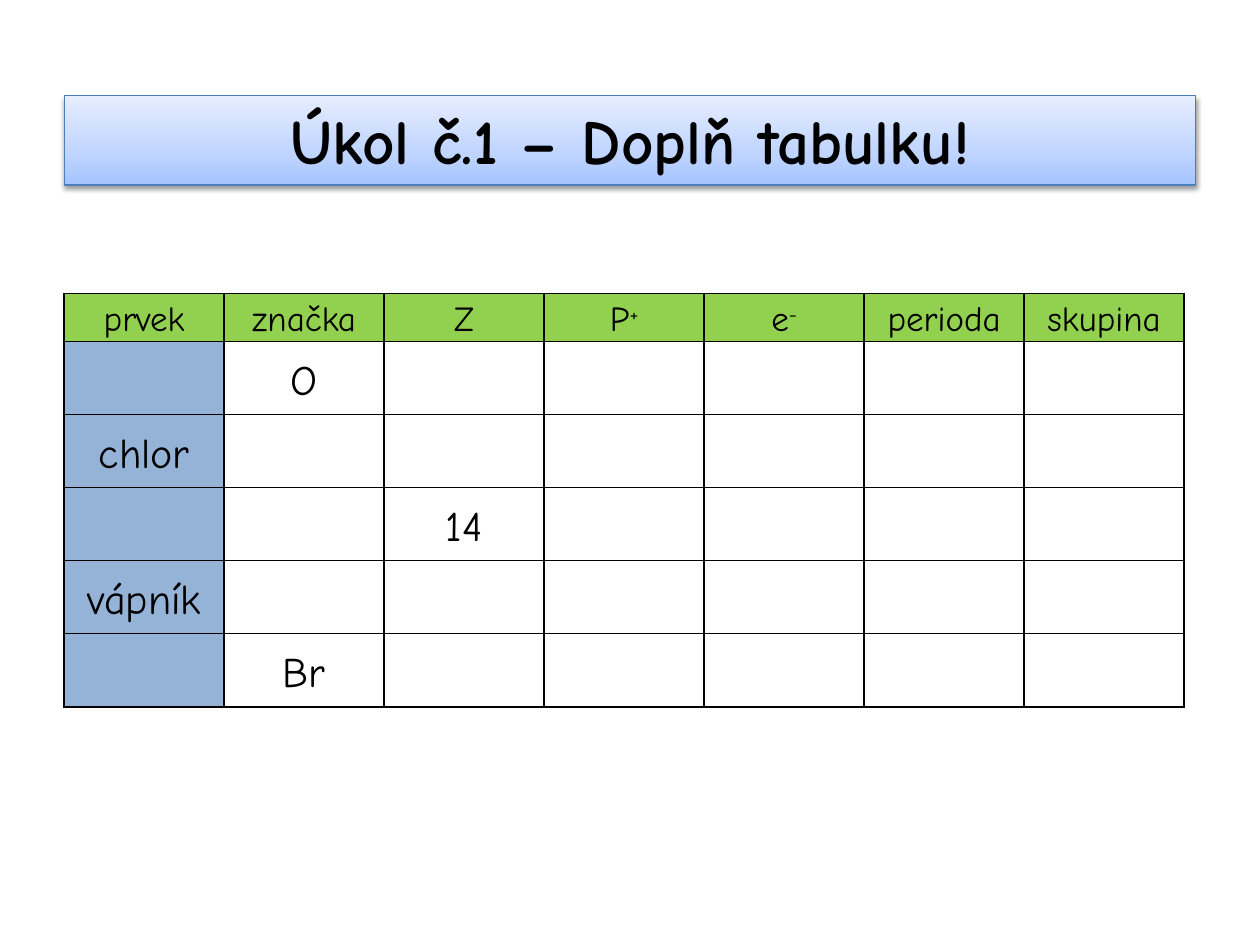
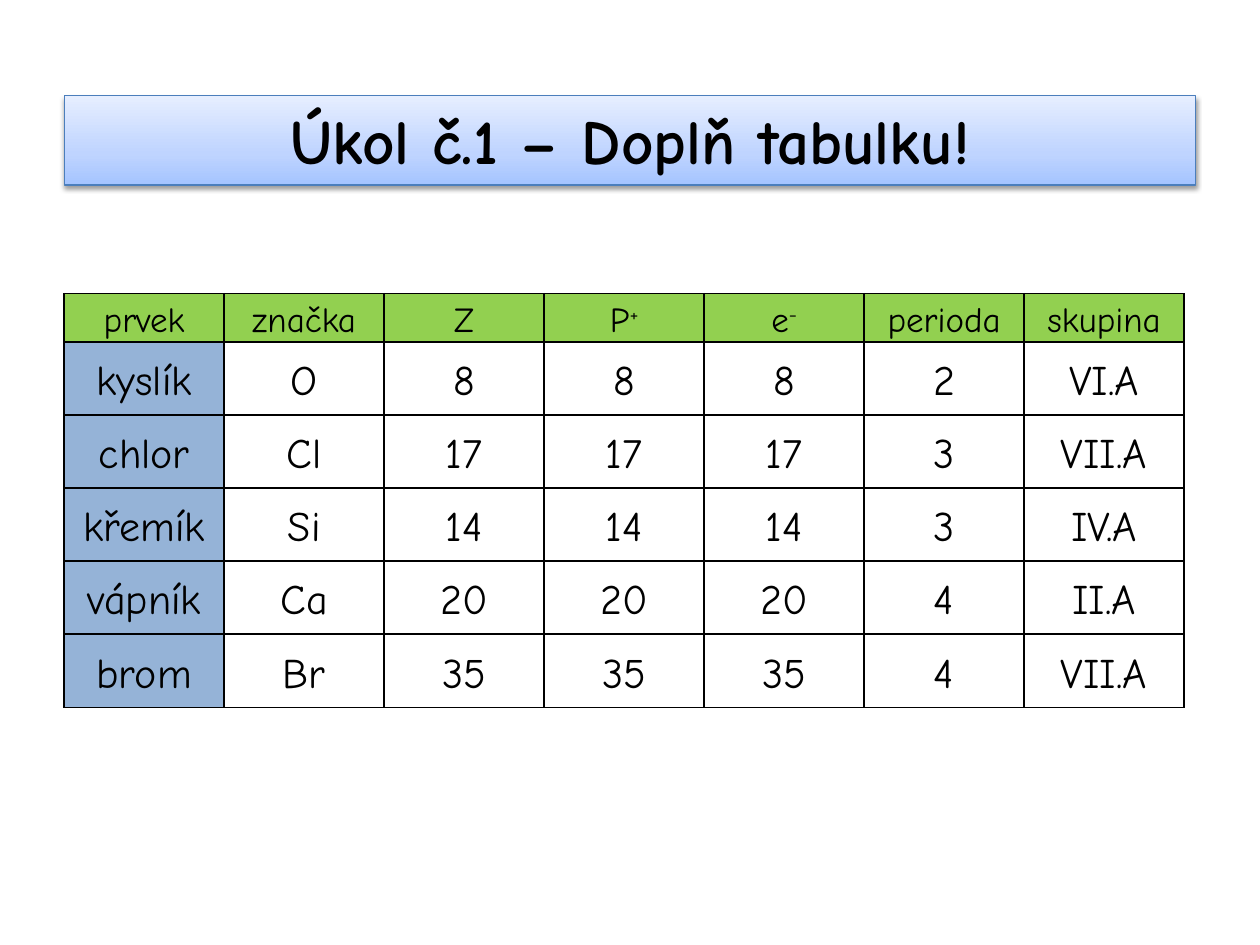
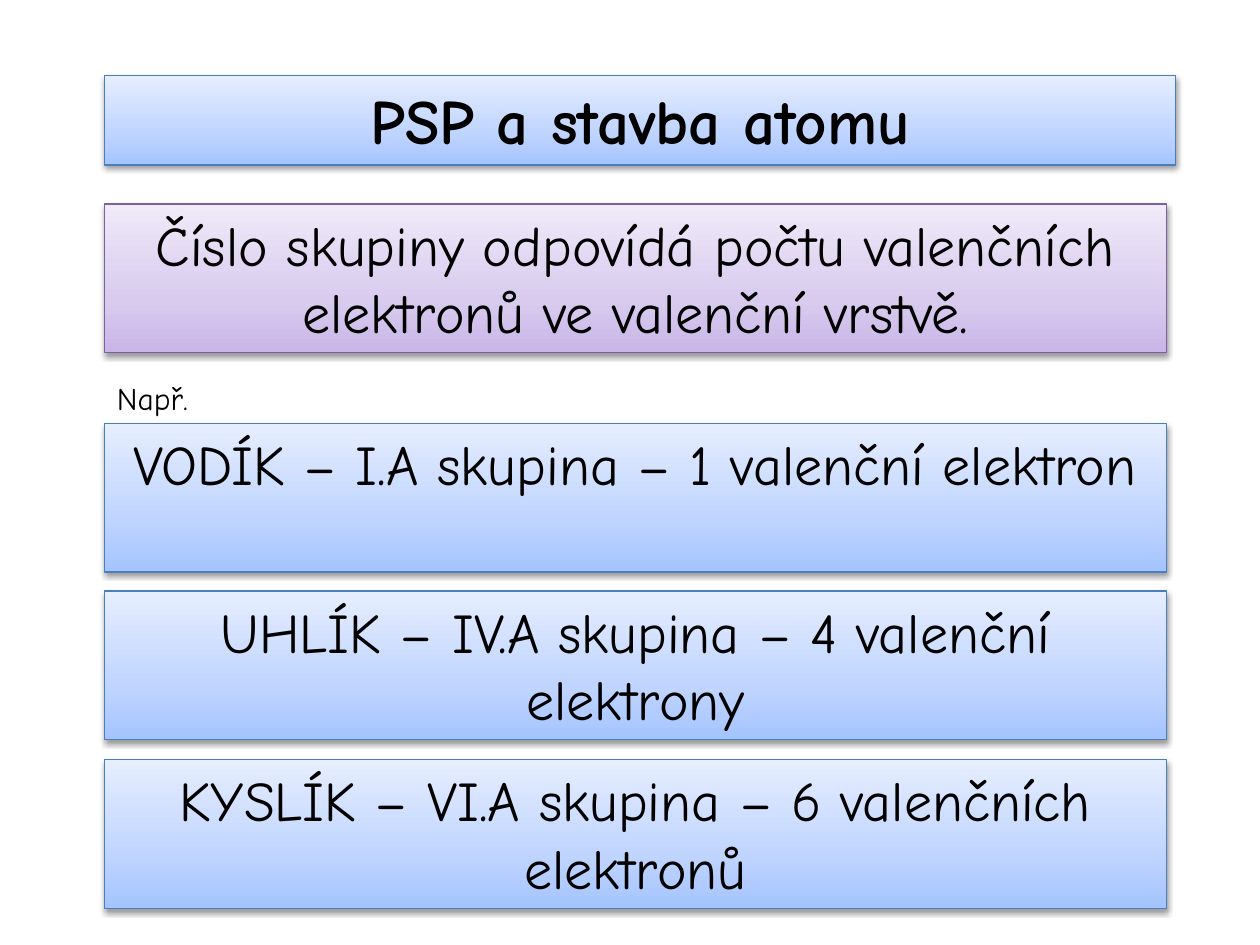
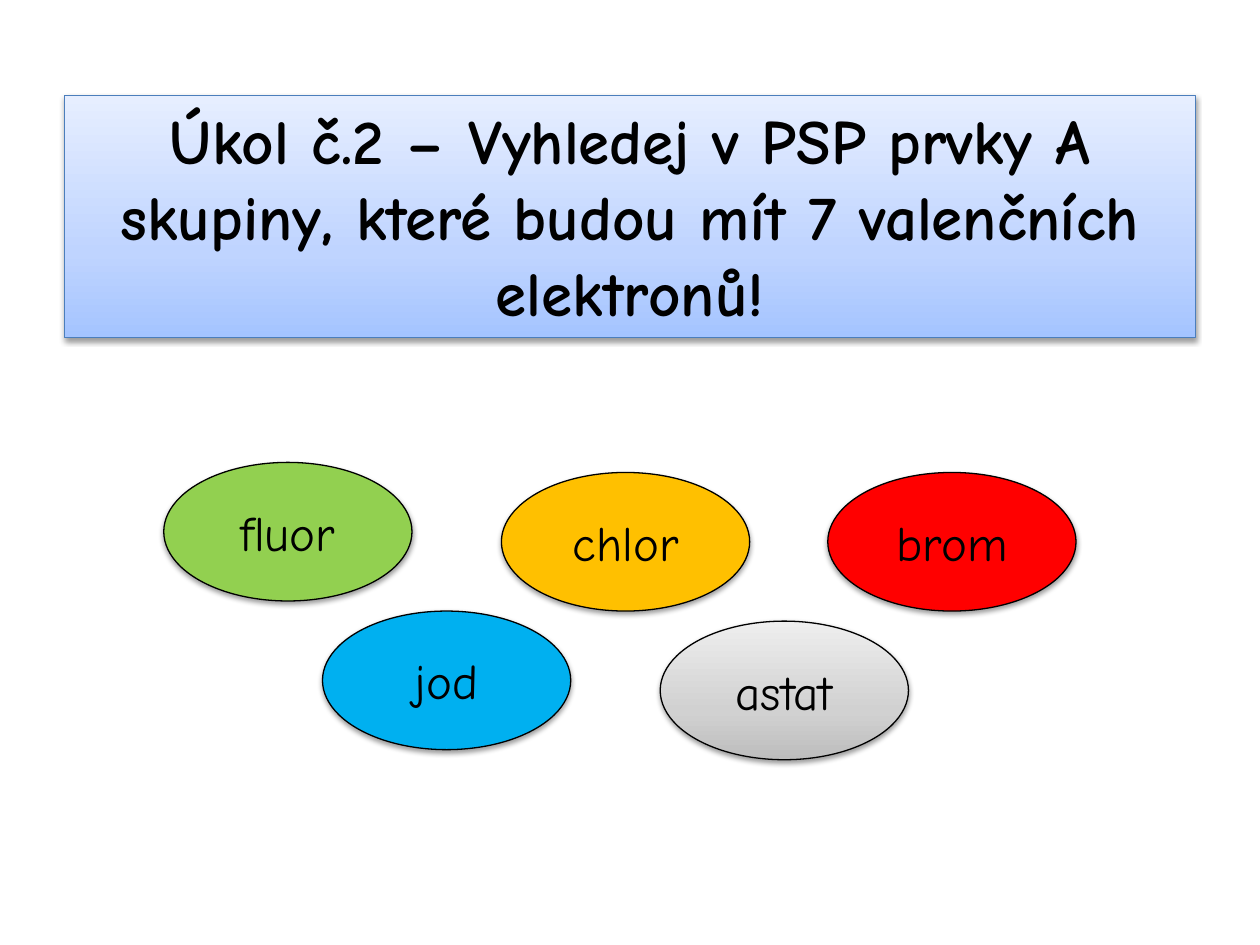
import dataclasses

import lxml.etree
import pptx
import pptx.dml.color
import pptx.enum.shapes
import pptx.enum.text
import pptx.oxml
import pptx.oxml.ns
import pptx.util

Inches = pptx.util.Inches
Pt = pptx.util.Pt
qn = pptx.oxml.ns.qn
ShapeKind = pptx.enum.shapes.MSO_SHAPE
Align = pptx.enum.text.PP_ALIGN
Anchor = pptx.enum.text.MSO_ANCHOR
AutoSize = pptx.enum.text.MSO_AUTO_SIZE


@dataclasses.dataclass(frozen=True)
class Theme:
    font: str = "Comic Neue"
    ink: str = "000000"
    green: str = "92D050"
    steel: str = "95B3D7"
    amber: str = "FFC000"
    red: str = "FF0000"
    sky: str = "00B0F0"
    # Gradients run from the bottom edge to the top edge.
    blue_fade: tuple = ("A4C4FF", "BFD4FF", "E6EEFF")
    violet_fade: tuple = ("C9B5E8", "D8CBEE", "F0EAF9")
    gray_fade: tuple = ("BDBDBD", "D1D1D1", "EEEEEE")
    fade_stops: tuple = (0, 35, 100)
    blue_line: str = "4B7EBC"
    violet_line: str = "7D60A0"
    outline: float = 0.75
    cell_border: float = 1
    title_size: int = 36
    statement_size: int = 32
    oval_size: int = 28
    cell_size: int = 24
    header_size: int = 20
    note_size: int = 18


THEME = Theme()

HEADERS = ("prvek", "značka", "Z", ("P", "+"), ("e", "-"), "perioda", "skupina")
ELEMENTS = (
    ("kyslík", "O", "8", "8", "8", "2", "VI.A"),
    ("chlor", "Cl", "17", "17", "17", "3", "VII.A"),
    ("křemík", "Si", "14", "14", "14", "3", "IV.A"),
    ("vápník", "Ca", "20", "20", "20", "4", "II.A"),
    ("brom", "Br", "35", "35", "35", "4", "VII.A"),
)
CLUE_COLUMNS = (1, 0, 2, 0, 1)

EXAMPLES = (
    (3.36, "VODÍK – I.A skupina – 1 valenční elektron"),
    (4.69, "UHLÍK – IV.A skupina – 4 valenční elektrony"),
    (6.03, "KYSLÍK – VI.A skupina – 6 valenčních elektronů"),
)

HALOGENS = (
    ("fluor", 1.3, 3.67, THEME.green),
    ("chlor", 3.98, 3.75, THEME.amber),
    ("brom", 6.57, 3.75, THEME.red),
    ("jod", 2.56, 4.85, THEME.sky),
    ("astat", 5.24, 4.93, THEME.gray_fade),
)


def rgb(color):
    return pptx.dml.color.RGBColor.from_string(color)


def add_xml(parent, tag, **attributes):
    return lxml.etree.SubElement(parent, qn(tag), attributes)


def style_runs(para, size, bold=False):
    for span in para.runs:
        span.font.name = THEME.font
        span.font.size = Pt(size)
        span.font.bold = bold
        span.font.color.rgb = rgb(THEME.ink)


def paint(shape, fill):
    """Fill with one colour, or with a vertical fade when given a tuple."""
    if isinstance(fill, str):
        shape.fill.solid()
        shape.fill.fore_color.rgb = rgb(fill)
        return
    shape.fill.gradient()
    shape.fill.gradient_angle = 90
    stops = shape._element.spPr.find(".//" + qn("a:gsLst"))
    for stop in list(stops):
        stops.remove(stop)
    for position, color in zip(THEME.fade_stops, fill):
        stop = add_xml(stops, "a:gs", pos=str(position * 1000))
        add_xml(stop, "a:srgbClr", val=color)


def add_soft_shadow(shape):
    shape.shadow.inherit = False
    effects = shape._element.spPr.find(qn("a:effectLst"))
    shadow = add_xml(effects, "a:outerShdw", blurRad=str(Pt(3.1)), dist=str(Pt(1.6)),
                     dir="5400000", rotWithShape="0")
    color = add_xml(shadow, "a:srgbClr", val=THEME.ink)
    add_xml(color, "a:alpha", val="38000")


def add_figure(shapes, kind, place, text, size, fill, line, bold=False):
    figure = shapes.add_shape(kind, *map(Inches, place))
    paint(figure, fill)
    figure.line.color.rgb = rgb(line)
    figure.line.width = Pt(THEME.outline)
    add_soft_shadow(figure)
    frame = figure.text_frame
    frame.word_wrap = True
    frame.text = text
    frame.paragraphs[0].alignment = Align.CENTER
    style_runs(frame.paragraphs[0], size, bold)
    return figure


def add_panel(page, place, text, size=THEME.statement_size,
              fill=THEME.blue_fade, line=THEME.blue_line, bold=False):
    panel = add_figure(page.shapes, ShapeKind.RECTANGLE, place, text, size, fill, line, bold)
    panel.text_frame.vertical_anchor = Anchor.TOP
    panel.text_frame.auto_size = AutoSize.SHAPE_TO_FIT_TEXT


def add_title(page, text, left=0.51, top=0.76, width=8.98, height=0.71):
    add_panel(page, (left, top, width, height), text, THEME.title_size, bold=True)


def add_oval(group, text, left, top, fill):
    oval = add_figure(group.shapes, ShapeKind.OVAL, (left, top, 1.97, 1.1),
                      text, THEME.oval_size, fill, THEME.ink)
    oval.text_frame.vertical_anchor = Anchor.MIDDLE


def add_note(page, place, text):
    box = page.shapes.add_textbox(*map(Inches, place))
    box.text_frame.word_wrap = False
    box.text_frame.auto_size = AutoSize.SHAPE_TO_FIT_TEXT
    box.text_frame.text = text
    style_runs(box.text_frame.paragraphs[0], THEME.note_size)


def add_borders(cell):
    properties = cell._tc.get_or_add_tcPr()
    for side in ("a:lnL", "a:lnR", "a:lnT", "a:lnB"):
        border = add_xml(properties, side, w=str(Pt(THEME.cell_border)))
        add_xml(add_xml(border, "a:solidFill"), "a:srgbClr", val=THEME.ink)


def write_cell(cell, content, size):
    """Write a string, or a (base, superscript) pair."""
    base, superscript = (content, "") if isinstance(content, str) else content
    cell.vertical_anchor = Anchor.MIDDLE
    cell.margin_left = cell.margin_right = Inches(0.07)
    cell.margin_top = cell.margin_bottom = 0
    para = cell.text_frame.paragraphs[0]
    para.text = base
    para.alignment = Align.CENTER
    para.line_spacing = 1.15
    if superscript:
        span = para.add_run()
        span.text = superscript
        span.font._element.set("baseline", "30000")
    style_runs(para, size)


def cell_fill(row, column):
    if row == 0:
        return THEME.green
    return THEME.steel if column == 0 else None


def add_element_table(page, elements):
    rows = (HEADERS, *elements)
    frame = page.shapes.add_table(len(rows), len(HEADERS), Inches(0.51), Inches(2.33),
                                  Inches(8.9), Inches(3.27))
    table = frame.table
    table.first_row = table.horz_banding = False
    for column in table.columns:
        column.width = Inches(1.27)
    for r, contents in enumerate(rows):
        table.rows[r].height = Inches(0.58 if r else 0.38)
        for c, content in enumerate(contents):
            cell = table.cell(r, c)
            add_borders(cell)
            color = cell_fill(r, c)
            if color:
                cell.fill.solid()
                cell.fill.fore_color.rgb = rgb(color)
            else:
                cell.fill.background()
            if content:
                write_cell(cell, content, THEME.cell_size if r else THEME.header_size)


def only_clues(elements):
    return [[value if column == clue else "" for column, value in enumerate(element)]
            for element, clue in zip(elements, CLUE_COLUMNS)]


def build_table_page(page, elements):
    add_element_table(page, elements)
    add_title(page, "Úkol č.1 – Doplň tabulku!")


def build_valence_page(page):
    left, width, height = 0.83, 8.43, 1.18
    add_panel(page, (left, 1.62, width, height),
              "Číslo skupiny odpovídá počtu valenčních elektronů ve valenční vrstvě.",
              fill=THEME.violet_fade, line=THEME.violet_line)
    add_title(page, "PSP a stavba atomu", left=left, top=0.6, width=8.5)
    add_note(page, (left, 2.96, 0.93, 0.4), "Např.")
    for top, text in EXAMPLES:
        add_panel(page, (left, top, width, height), text)


def build_halogen_page(page):
    add_title(page, "Úkol č.2 – Vyhledej v PSP prvky A skupiny, "
                    "které budou mít 7 valenčních elektronů!", height=1.92)
    group = page.shapes.add_group_shape()
    for name, left, top, fill in HALOGENS:
        add_oval(group, name, left, top, fill)


def main():
    deck = pptx.Presentation()
    deck.slide_width, deck.slide_height = Inches(10), Inches(7.5)
    blank = deck.slide_layouts[6]
    build_table_page(deck.slides.add_slide(blank), only_clues(ELEMENTS))
    build_table_page(deck.slides.add_slide(blank), ELEMENTS)
    build_valence_page(deck.slides.add_slide(blank))
    build_halogen_page(deck.slides.add_slide(blank))
    deck.save("out.pptx")


if __name__ == "__main__":
    main()
